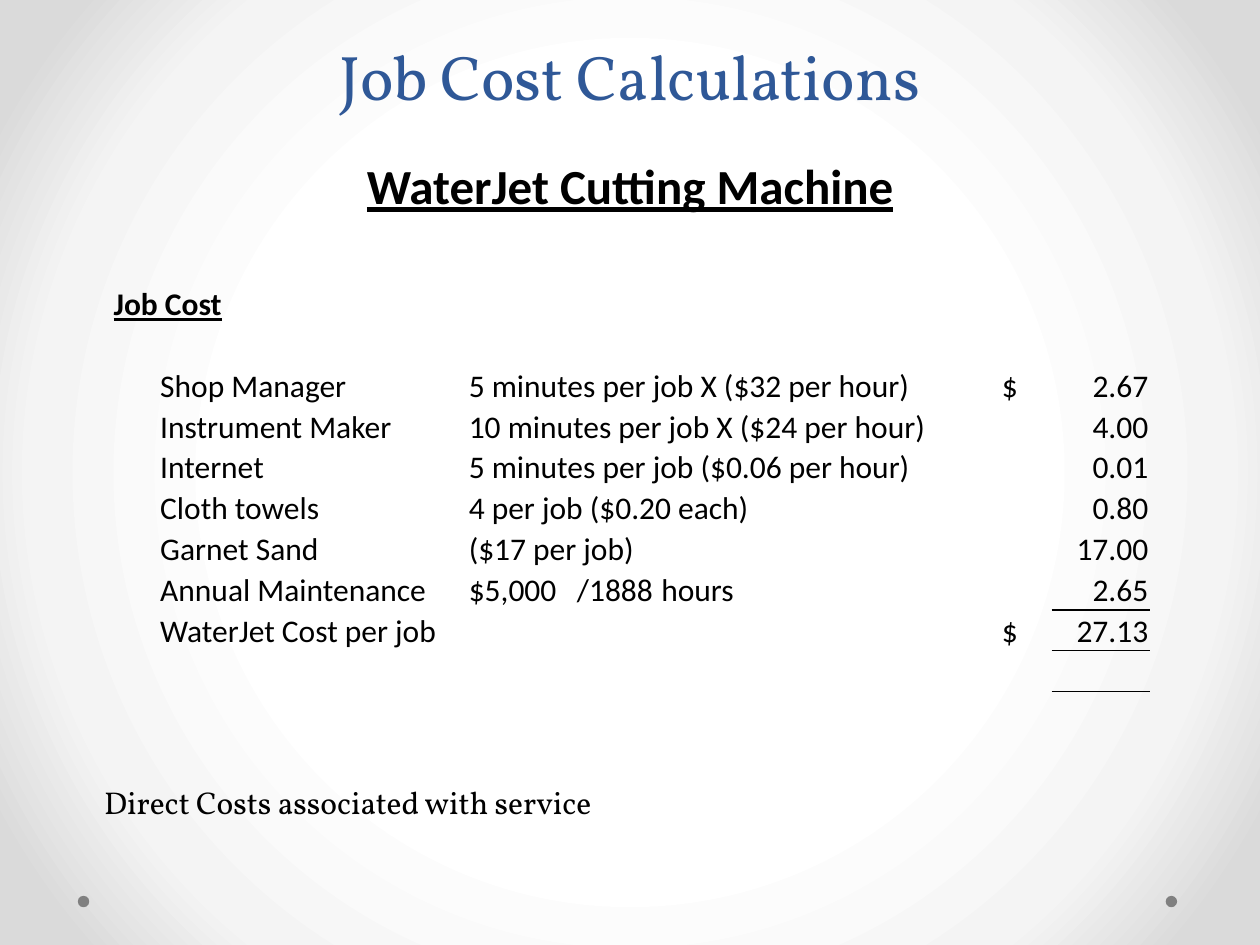
from lxml import etree
from pptx import Presentation, util as u
from pptx.dml.color import RGBColor
from pptx.enum import shapes, text
from pptx.oxml import ns, parse_xml

BODY, SERIF = "Calibri", "Vollkorn"
BLACK, BLUE, GREY = "000000", "2F5897", "808080"
LEFT, CENTER, RIGHT = text.PP_ALIGN.LEFT, text.PP_ALIGN.CENTER, text.PP_ALIGN.RIGHT
HEADING = {"bold": True, "underline": True}
NO_STYLE = "{2D5ABB26-0587-4C30-8999-92F81FD0307C}"

COL_WIDTHS = [0.94, 1.7, 1.37, 3.15, 2.18, 1.7, 1.7, 4.52, 1.68, 1.98]
ROW_HEIGHTS = [0.82] * 7 + [0.84] + [0.82] * 2 + [0.53]
LABEL, DETAIL, SIGN, AMOUNT = 1, 4, 8, 9
FIRST_ITEM = 2

# Label, columns it spans, detail parts, columns the detail spans, sign, amount
ITEMS = [
    ("Shop Manager", 3, ["5 minutes per job X ($32 per hour)"], 4, "$", "2.67"),
    ("Instrument Maker", 3, ["10 minutes per job X ($24 per hour)"], 4, "", "4.00"),
    ("Internet", 2, ["5 minutes per job ($0.06 per hour)"], 4, "", "0.01"),
    ("Cloth towels", 3, ["4 per job ($0.20 each)"], 4, "", "0.80"),
    ("Garnet Sand", 3, ["($17 per job)"], 2, "", "17.00"),
    ("Annual Maintenance", 3, ["$5,000", "/1888", "hours"], 1, "", "2.65"),
    ("WaterJet Cost per job", 3, [], 1, "$", "27.13"),
]


def rgb(value):
    return RGBColor.from_string(value)


class Deck:
    def __init__(self, width, height):
        self.prs = Presentation()
        self.prs.slide_width, self.prs.slide_height = u.Cm(width), u.Cm(height)
        self.s = self.prs.slides.add_slide(self.prs.slide_layouts[6])

    def background(self, stops):
        """Fill the slide with a circular gradient around its centre."""
        self.s.background.fill.gradient()
        marks = "".join(
            f'<a:gs pos="{pos * 1000}"><a:srgbClr val="{color}"/></a:gs>'
            for pos, color in stops)
        grad = parse_xml(
            f'<a:gradFill {ns.nsdecls("a")} rotWithShape="1"><a:gsLst>{marks}</a:gsLst>'
            '<a:path path="circle"><a:fillToRect l="50000" t="50000" r="50000" b="50000"/>'
            '</a:path></a:gradFill>')
        old = self.s.element.find(".//" + ns.qn("a:gradFill"))
        old.getparent().replace(old, grad)

    def dot(self, x, y, size, color):
        sp = self.s.shapes.add_shape(
            shapes.MSO_SHAPE.OVAL, u.Cm(x), u.Cm(y), u.Cm(size), u.Cm(size))
        sp.shadow.inherit = False
        sp.fill.solid()
        sp.fill.fore_color.rgb = rgb(color)
        sp.line.fill.background()

    def add_words(self, p, words, size=18, font=BODY, color=BLACK, align=LEFT, **extra):
        p.alignment = align
        r = p.add_run()
        r.text = words
        r.font.color.rgb = rgb(color)
        formats = {"name": font, "size": u.Pt(size), **extra}
        for key, value in formats.items():
            setattr(r.font, key, value)

    def textbox(self, x, y, w, h, lines, spacing=None, **frame):
        """Add a text box; each line is its words and a dict of formats."""
        sp = self.s.shapes.add_textbox(u.Cm(x), u.Cm(y), u.Cm(w), u.Cm(h))
        tf = sp.text_frame
        for key, value in {"word_wrap": True, **frame}.items():
            setattr(tf, key, value)
        for i, (words, formats) in enumerate(lines):
            p = tf.add_paragraph() if i else tf.paragraphs[0]
            if spacing:
                p.line_spacing = u.Pt(spacing)
            self.add_words(p, words, **formats)

    def table(self, x, y, widths, heights):
        """Add a plain table whose empty cells stay small."""
        table = self.s.shapes.add_table(
            len(heights), len(widths), u.Cm(x), u.Cm(y),
            u.Cm(sum(widths)), u.Cm(sum(heights))).table
        table.first_row = table.horz_banding = False
        table._tbl.tblPr.find(ns.qn("a:tableStyleId")).text = NO_STYLE
        for col, width in zip(table.columns, widths):
            col.width = u.Cm(width)
        for row, height in zip(table.rows, heights):
            row.height = u.Cm(height)
        margins = {"margin_left": 0.03, "margin_right": 0.03,
                   "margin_top": 0.03, "margin_bottom": 0}
        for cell in table.iter_cells():
            cell.fill.background()
            cell.vertical_anchor = text.MSO_ANCHOR.BOTTOM
            for key, value in margins.items():
                setattr(cell, key, u.Cm(value))
            end = etree.SubElement(
                cell.text_frame.paragraphs[0]._p, ns.qn("a:endParaRPr"))
            end.set("sz", "1000")
        return table

    def cell(self, table, row, col, words, span=1, **formats):
        cell = table.cell(row, col)
        if span > 1:
            cell.merge(table.cell(row, col + span - 1))
        if words:
            self.add_words(cell.text_frame.paragraphs[0], words, **formats)

    def rule(self, table, row, col, points):
        """Draw a line between a cell and the one below it."""
        for r, side in ((row, "lnB"), (row + 1, "lnT")):
            line = parse_xml(
                f'<a:{side} {ns.nsdecls("a")} w="{u.Pt(points)}"><a:solidFill>'
                f'<a:srgbClr val="{BLACK}"/></a:solidFill></a:{side}>')
            tc_pr = table.cell(r, col)._tc.get_or_add_tcPr()
            has_top = tc_pr.find(ns.qn("a:lnT")) is not None
            tc_pr.insert(int(has_top), line)


def main():
    deck = Deck(25.4, 19.05)
    deck.background([(50, "FFFFFF"), (76, "F4F4F4"), (92, "DADADA")])
    for x in (23.5, 1.57):
        deck.dot(x, 18.06, 0.23, GREY)

    deck.textbox(1.27, 0, 22.86, 4.45, [
        ("Job Cost Calculations",
         {"size": 36, "font": SERIF, "color": BLUE, "align": CENTER}),
        ("WaterJet Cutting Machine", {"size": 28, "align": CENTER, **HEADING}),
    ], spacing=58, vertical_anchor=text.MSO_ANCHOR.BOTTOM)
    deck.textbox(1.85, 15.67, 20.85, 1.8,
                 [("Direct Costs associated with service", {"font": SERIF})])

    costs = deck.table(2.26, 5.72, COL_WIDTHS, ROW_HEIGHTS)
    deck.cell(costs, 0, 0, "Job Cost", 2, **HEADING)
    for row, (label, label_span, parts, span, sign, amount) in enumerate(ITEMS, FIRST_ITEM):
        deck.cell(costs, row, LABEL, label, label_span)
        for col, part in enumerate(parts, DETAIL):
            deck.cell(costs, row, col, part, span)
        deck.cell(costs, row, SIGN, sign, align=CENTER)
        deck.cell(costs, row, AMOUNT, amount, align=RIGHT)
    total = FIRST_ITEM + len(ITEMS) - 1
    deck.cell(costs, total + 1, LABEL, "", 4)
    deck.rule(costs, total - 1, AMOUNT, 1)
    deck.rule(costs, total, AMOUNT, 0.5)

    deck.prs.save("out.pptx")


if __name__ == "__main__":
    main()
